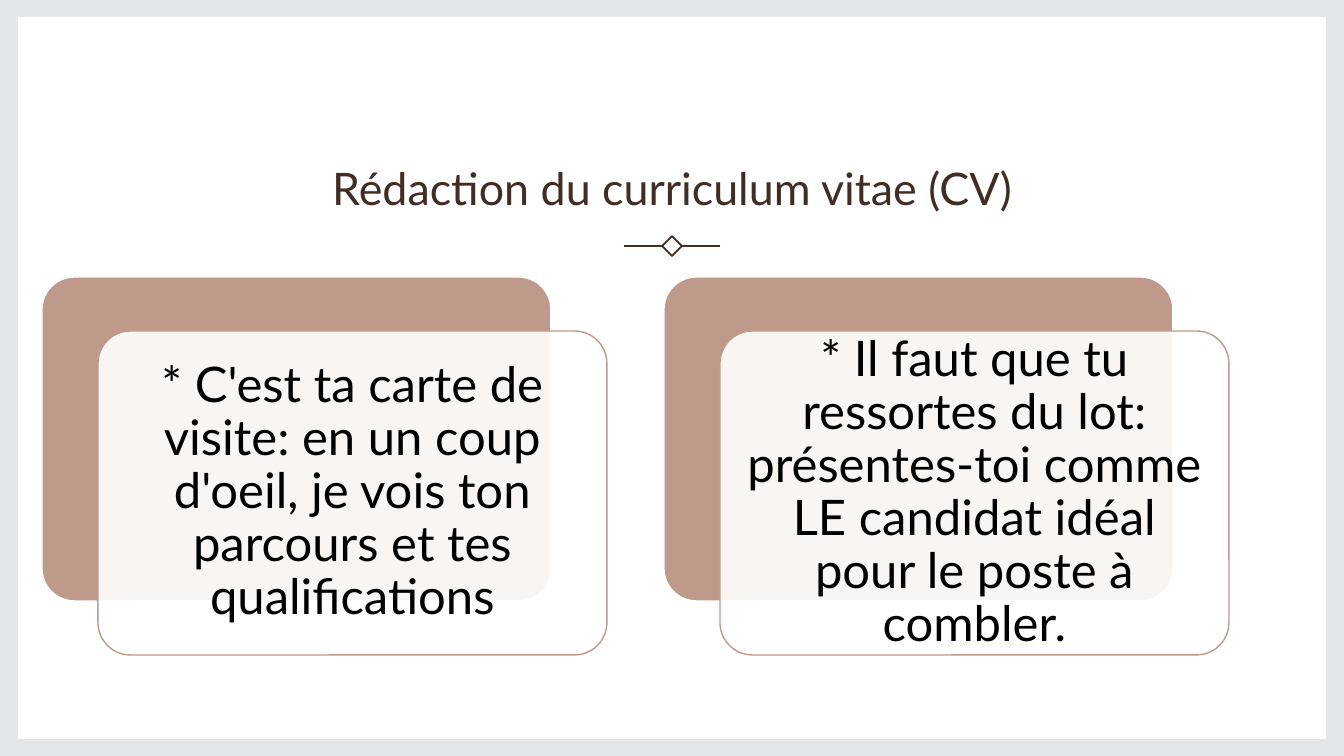
from dataclasses import dataclass

from lxml import etree
from pptx import Presentation
from pptx.dml.color import RGBColor
from pptx.enum.shapes import MSO_CONNECTOR, MSO_SHAPE
from pptx.enum.text import MSO_ANCHOR, MSO_AUTO_SIZE, PP_ALIGN
from pptx.oxml.ns import qn
from pptx.util import Pt

RECT, ROUND = MSO_SHAPE.RECTANGLE, MSO_SHAPE.ROUNDED_RECTANGLE
LINE = MSO_CONNECTOR.STRAIGHT
MIDDLE, BOTTOM = MSO_ANCHOR.MIDDLE, MSO_ANCHOR.BOTTOM
CENTER, NO_FIT = PP_ALIGN.CENTER, MSO_AUTO_SIZE.NONE

WIDE, HIGH = 1344, 756
SCALE = 12192000 / WIDE  # EMU in one px


@dataclass(frozen=True)
class Theme:
    font: str = "Lato"
    frame: str = "E2E6E8"
    paper: str = "FFFFFF"
    dark: str = "412D24"
    rose: str = "BF9989"
    ink: str = "000000"
    title: int = 32
    body: int = 35
    rule: float = 1.25
    edge: float = 1


THEME = Theme()
TITLE = "Rédaction du curriculum vitae (CV)"
CARDS = [
    "* C'est ta carte de visite: en un coup d'oeil, je vois ton parcours "
    "et tes qualifications",
    "* Il faut que tu ressortes du lot: présentes-toi comme LE candidat "
    "idéal pour le poste à combler.",
]


def px(*nums):
    return [round(num * SCALE) for num in nums]


def apply(item, form):
    for name, value in form.items():
        setattr(item, name, value)


def stroke(line, color, width):
    line.color.rgb = RGBColor.from_string(color)
    line.width = Pt(width)


def add_box(shapes, kind, box, fill=None, edge=None, width=0):
    shape = shapes.add_shape(kind, *px(*box))
    shape.shadow.inherit = False
    if fill:
        shape.fill.solid()
        shape.fill.fore_color.rgb = RGBColor.from_string(fill)
    else:
        shape.fill.background()
    if edge:
        stroke(shape.line, edge, width)
    else:
        shape.line.fill.background()
    return shape


def write(shape, text, size, color, frame, para):
    """Fill a shape with one formatted paragraph."""
    body = shape.text_frame
    body.text = text
    first = body.paragraphs[0]
    apply(body, {"word_wrap": True, "auto_size": NO_FIT, **frame})
    apply(first, {"alignment": CENTER, **para})
    apply(first.runs[0].font, {"name": THEME.font, "size": Pt(size)})
    first.runs[0].font.color.rgb = RGBColor.from_string(color)


def add_frame(slide, box):
    """Grey border around a white sheet."""
    x, y, w, h = box
    add_box(slide.shapes, RECT, box, THEME.frame)
    add_box(slide.shapes, RECT, (x + 18, y + 17, w - 36, h - 34), THEME.paper)


def add_title(slide, box):
    title = slide.shapes.title
    apply(title, dict(zip(("left", "top", "width", "height"), px(*box))))
    write(title, TITLE, THEME.title, THEME.dark,
          {"vertical_anchor": BOTTOM}, {"line_spacing": 1.1})


def add_rule(slide, box):
    """Diamond between two short lines."""
    x, y, w, h = box
    mid, row, gap = x + w // 2, y + h // 2, 9
    group = slide.shapes.add_group_shape().shapes
    mark = add_box(group, RECT, (mid - h // 2, y, h, h),
                   edge=THEME.dark, width=THEME.rule)
    mark.rotation = 45
    for start, end in ((x, mid - gap), (mid + gap, x + w)):
        line = group.add_connector(LINE, *px(start, row, end, row))
        stroke(line.line, THEME.dark, THEME.rule)
        etree.SubElement(line._element.spPr, qn("a:effectLst"))


def add_card(shapes, box, text):
    """Solid card with a translucent text card shifted over it."""
    x, y, w, h = box
    back = add_box(shapes, ROUND, box, THEME.rose, THEME.paper, THEME.edge)
    front = add_box(shapes, ROUND, (x + 56, y + 54, w, h),
                    THEME.paper, THEME.rose, THEME.edge)
    for card in (back, front):
        card.adjustments[0] = 0.1
    tint = front._element.spPr.find(qn("a:solidFill"))[0]
    etree.SubElement(tint, qn("a:alpha"), val="90000")
    sides = ("margin_left", "margin_top", "margin_right", "margin_bottom")
    pad = dict.fromkeys(sides, px(15)[0])
    write(front, text, THEME.body, THEME.ink,
          {"vertical_anchor": MIDDLE, **pad}, {"line_spacing": 0.9})


def add_cards(slide, box):
    x, y, w, h = box
    step = 622
    group = slide.shapes.add_group_shape().shapes
    for i, text in enumerate(CARDS):
        add_card(group, (x + i * step, y, w, h), text)


def main():
    deck = Presentation()
    deck.slide_width, deck.slide_height = px(WIDE, HIGH)
    slide = deck.slides.add_slide(deck.slide_layouts[5])
    add_frame(slide, (0, 0, WIDE, HIGH))
    # Bring the title in front of the sheet
    slide.shapes._spTree.append(slide.shapes.title._element)
    add_title(slide, (114, 106, 1117, 114))
    add_rule(slide, (624, 239, 96, 14))
    add_cards(slide, (42, 277, 509, 324))
    deck.save("out.pptx")


if __name__ == "__main__":
    main()
